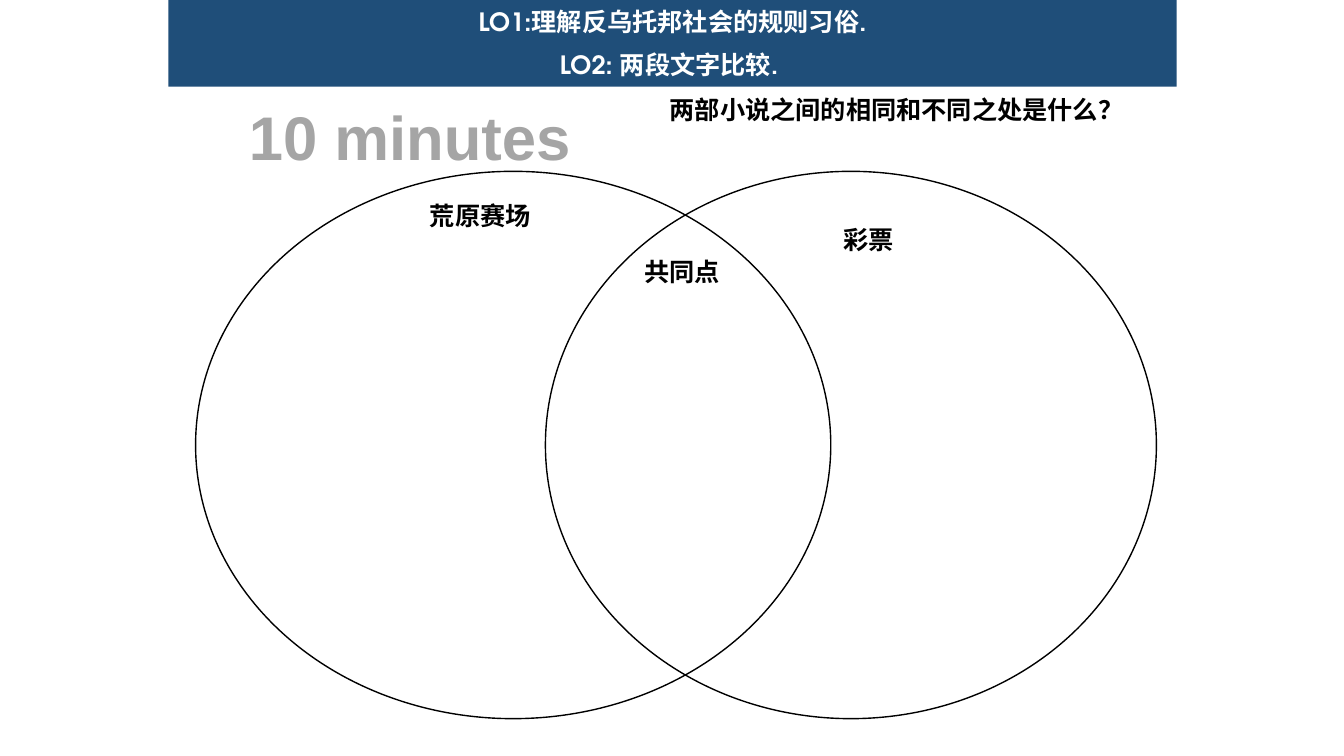
from dataclasses import dataclass

from pptx import Presentation
from pptx.dml.color import RGBColor
from pptx.enum.shapes import MSO_SHAPE
from pptx.enum.text import MSO_ANCHOR, MSO_AUTO_SIZE, PP_ALIGN
from pptx.util import Inches, Pt

OVAL = MSO_SHAPE.OVAL
MIDDLE, TOP = MSO_ANCHOR.MIDDLE, MSO_ANCHOR.TOP
NO_AUTOFIT = MSO_AUTO_SIZE.NONE
CENTER, RIGHT = PP_ALIGN.CENTER, PP_ALIGN.RIGHT


@dataclass(frozen=True)
class Theme:
    black: RGBColor = RGBColor(0x00, 0x00, 0x00)
    white: RGBColor = RGBColor(0xFF, 0xFF, 0xFF)
    navy: RGBColor = RGBColor(0x1F, 0x4E, 0x79)
    grey: RGBColor = RGBColor(0xA5, 0xA5, 0xA5)
    body_size: int = 18
    timer_size: int = 44
    banner_font: str = "TeX Gyre Adventor"
    label_font: str = "Comic Neue"
    timer_font: str = "Arial"


THEME = Theme()


def add_line(paragraph, words, font, size, color, align=CENTER):
    paragraph.alignment = align
    run = paragraph.add_run()
    run.text = words
    run.font.name = font
    run.font.size = Pt(size)
    run.font.bold = True
    run.font.color.rgb = color


def add_label(words, left, top, width, height, font, size, color, align=CENTER):
    label = slide.shapes.add_textbox(Inches(left), Inches(top), Inches(width), Inches(height))
    label.text_frame.word_wrap = True
    label.text_frame.vertical_anchor = TOP
    add_line(label.text_frame.paragraphs[0], words, font, size, color, align)


deck = Presentation()
deck.slide_width, deck.slide_height = Inches(13.33), Inches(7.5)
slide = deck.slides.add_slide(deck.slide_layouts[5])

objectives = ["LO1:理解反乌托邦社会的规则习俗.", "LO2: 两段文字比较. "]
banner = slide.shapes.title
banner.left, banner.top = Inches(1.67), Inches(0)
banner.width, banner.height = Inches(10), Inches(0.86)
banner.fill.solid()
banner.fill.fore_color.rgb = THEME.navy
banner_text = banner.text_frame
banner_text.auto_size = NO_AUTOFIT
banner_text.word_wrap = True
banner_text.vertical_anchor = MIDDLE
for number, objective in enumerate(objectives):
    paragraph = banner_text.add_paragraph() if number else banner_text.paragraphs[0]
    paragraph.space_before = Pt(THEME.body_size / 2)
    add_line(paragraph, objective, THEME.banner_font, THEME.body_size, THEME.white)

circle_top, circle_height = 1.7, 5.43
for left, width, filled in [(1.94, 6.3, True), (5.41, 6.06, False)]:
    novel = slide.shapes.add_shape(
        OVAL, Inches(left), Inches(circle_top), Inches(width), Inches(circle_height))
    novel.shadow.inherit = False
    if filled:
        novel.fill.solid()
        novel.fill.fore_color.rgb = THEME.white
    else:
        novel.fill.background()
    novel.line.color.rgb = THEME.black
    novel.line.width = Pt(1)

label_style = (THEME.label_font, THEME.body_size, THEME.black)
add_label("两部小说之间的相同和不同之处是什么？", 6.11, 0.89, 5.13, 0.4, *label_style, RIGHT)
for words, left, top in [("荒原赛场", 3.75, 1.94), ("彩票", 7.6, 2.18), ("共同点", 5.75, 2.49)]:
    add_label(words, left, top, 2.03, 0.4, *label_style)
add_label("10 minutes", 2.16, 0.93, 3.81, 0.84, THEME.timer_font, THEME.timer_size, THEME.grey)

deck.save("out.pptx")
